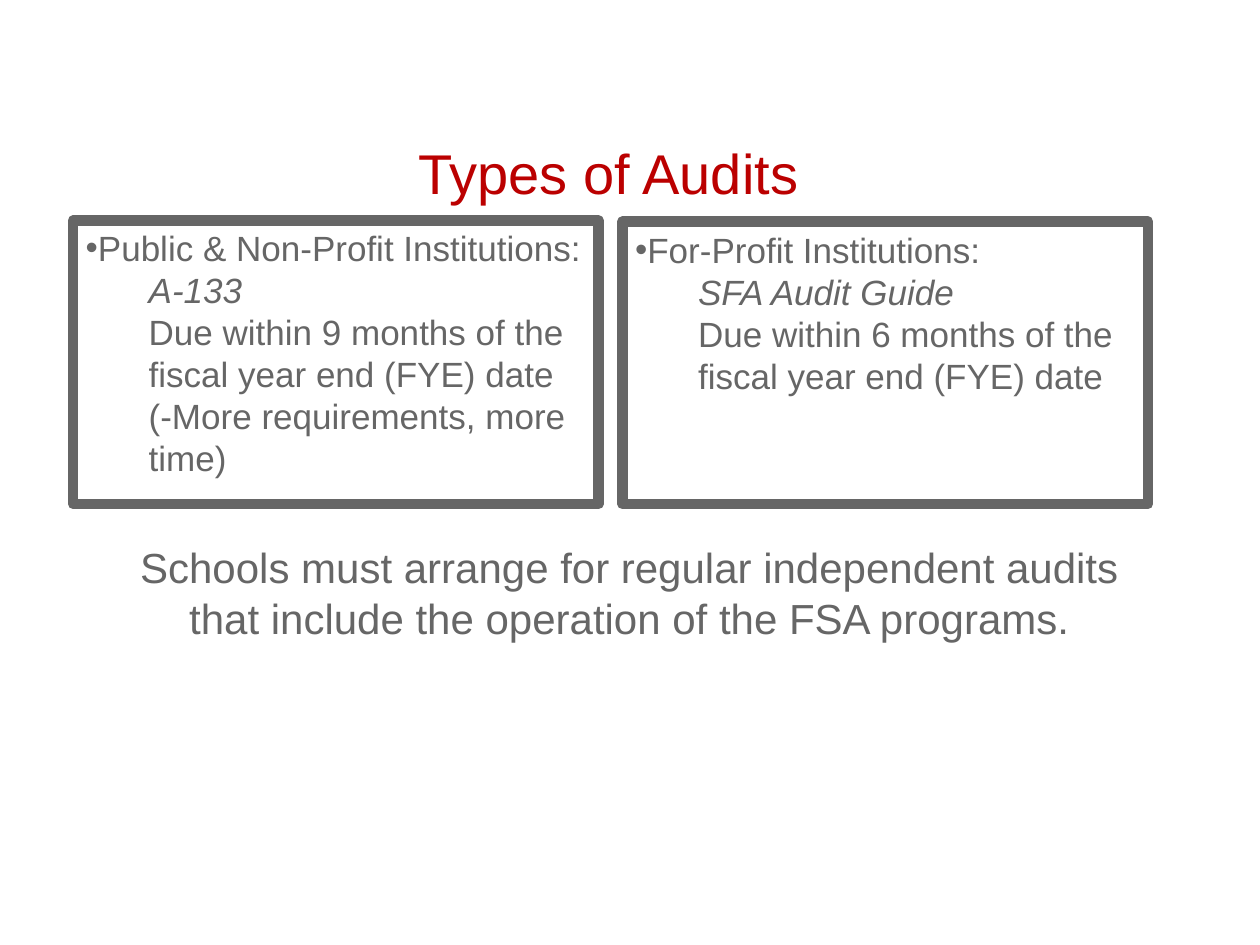
import lxml.etree
import pptx
import pptx.dml.color
import pptx.enum.text
import pptx.oxml.ns
import pptx.util

Inches = pptx.util.Inches
Pt = pptx.util.Pt
ALIGN = pptx.enum.text.PP_ALIGN
ANCHOR = pptx.enum.text.MSO_ANCHOR
RED, GRAY, WHITE = "BB0000", "666666", "FFFFFF"


def color(hex_code):
    """Return the colour for a hex string."""
    return pptx.dml.color.RGBColor.from_string(hex_code)


def place(part, box):
    """Move a part to a box of left, top, width and height in inches."""
    part.left, part.top, part.width, part.height = map(Inches, box)


def write(paragraph, wording, size, hex_code, align, italic=False):
    """Add one formatted run to a paragraph."""
    paragraph.alignment = align
    paragraph.space_before = Pt(0)
    run = paragraph.add_run()
    run.text = wording
    run.font.name = "Arial"
    run.font.size = Pt(size)
    run.font.italic = italic
    run.font.color.rgb = color(hex_code)


def set_bullet(paragraph, symbol, indent):
    """Give a paragraph a left indent and a bullet, or none."""
    properties = paragraph._p.get_or_add_pPr()
    properties.set("marL", str(Inches(indent)))
    properties.set("indent", "0")
    tag = "a:buChar" if symbol else "a:buNone"
    bullet = lxml.etree.SubElement(properties, pptx.oxml.ns.qn(tag))
    if symbol:
        bullet.set("char", symbol)


def add_heading(title, box, wording):
    """Fill the title placeholder."""
    place(title, box)
    title.text_frame.vertical_anchor = ANCHOR.MIDDLE
    write(title.text_frame.paragraphs[0], wording, 32, RED, ALIGN.CENTER)


def add_audit_panel(panel, box, institutions, standard, details):
    """Fill a framed list with an institution type and its audit rules."""
    place(panel, box)
    panel.fill.solid()
    panel.fill.fore_color.rgb = color(WHITE)
    panel.line.color.rgb = color(GRAY)
    panel.line.width = Pt(6)
    frame = panel.text_frame
    frame.auto_size = pptx.enum.text.MSO_AUTO_SIZE.NONE
    frame.vertical_anchor = ANCHOR.TOP
    for index, wording in enumerate([institutions, standard, *details]):
        paragraph = frame.add_paragraph() if index else frame.paragraphs[0]
        paragraph.level = 1 if index else 0
        set_bullet(paragraph, "" if index else "•", 0.5 if index else 0)
        write(paragraph, wording, 20, GRAY, ALIGN.LEFT, italic=index == 1)


def add_summary(slide, box, wording):
    """Add the centred closing statement."""
    frame = slide.shapes.add_textbox(*map(Inches, box)).text_frame
    frame.word_wrap = True
    frame.auto_size = pptx.enum.text.MSO_AUTO_SIZE.SHAPE_TO_FIT_TEXT
    write(frame.paragraphs[0], wording, 24, GRAY, ALIGN.CENTER)


def main():
    """Build the slide and save it."""
    deck = pptx.Presentation()
    deck.slide_width, deck.slide_height = Inches(10), Inches(7.5)
    slide = deck.slides.add_slide(deck.slide_layouts.get_by_name("Two Content"))
    title, public_panel, profit_panel = list(slide.placeholders)[:3]
    add_heading(title, (0.49, 0.99, 8.68, 0.75), "Types of Audits")
    add_audit_panel(
        public_panel, (0.58, 1.75, 4.17, 2.25),
        "Public & Non-Profit Institutions:", "A-133",
        ["Due within 9 months of the fiscal year end (FYE) date",
         "(-More requirements, more time)"])
    add_audit_panel(
        profit_panel, (4.94, 1.76, 4.17, 2.24),
        "For-Profit Institutions:", "SFA Audit Guide",
        ["Due within 6 months of the fiscal year end (FYE) date"])
    add_summary(
        slide, (0.83, 4.25, 8.33, 0.91),
        "Schools must arrange for regular independent audits "
        "that include the operation of the FSA programs.")
    deck.save("out.pptx")


if __name__ == "__main__":
    main()
